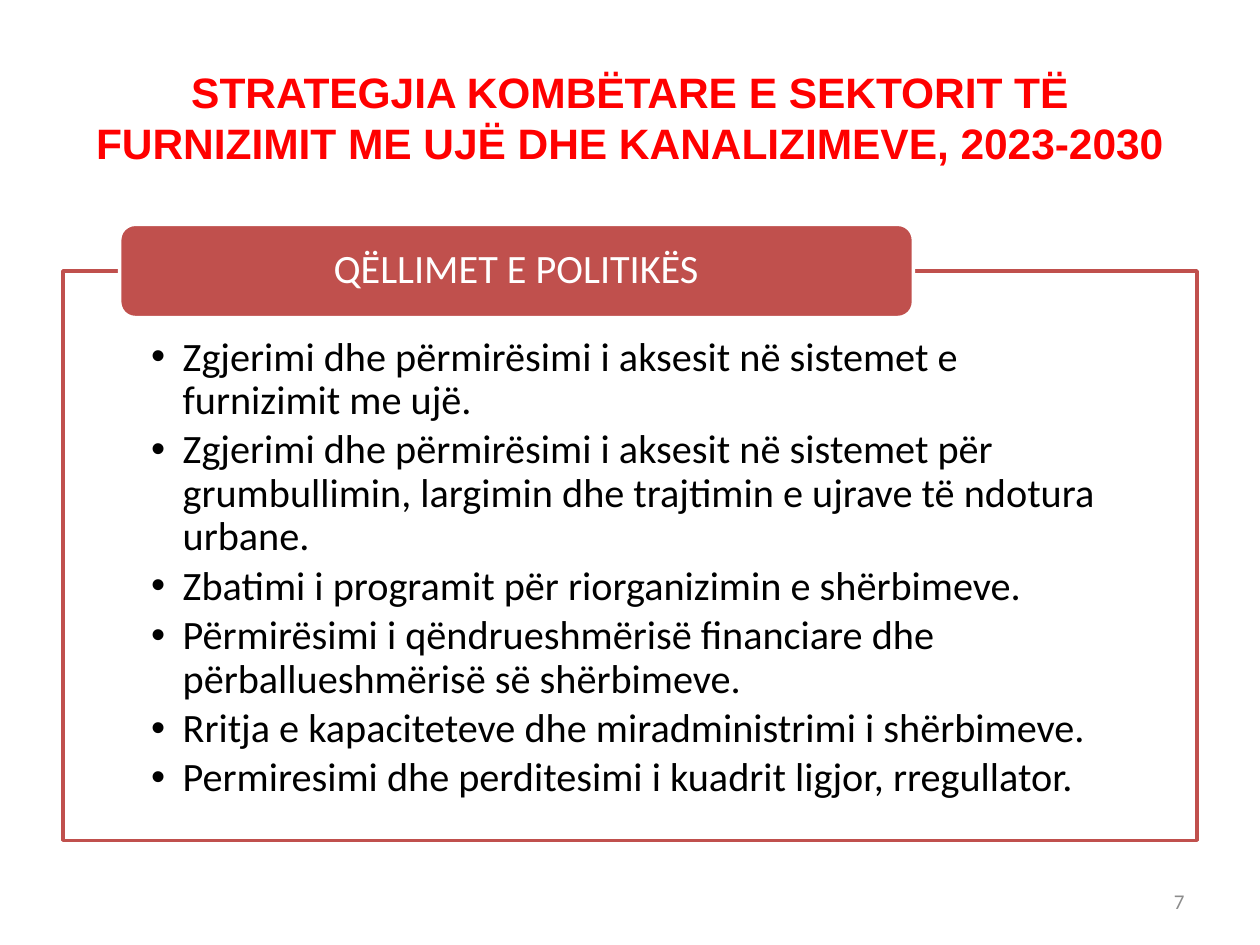
from pptx import Presentation
from pptx.dml.color import RGBColor
from pptx.enum.shapes import MSO_SHAPE
from pptx.enum.text import MSO_ANCHOR, MSO_AUTO_SIZE, PP_ALIGN
from pptx.util import Pt

RED = RGBColor(0xFF, 0x00, 0x00)
BRICK = RGBColor(0xC0, 0x50, 0x4D)
WHITE = RGBColor(0xFF, 0xFF, 0xFF)
BLACK = RGBColor(0x00, 0x00, 0x00)
GREY = RGBColor(0x8C, 0x8C, 0x8C)

TITLE = "STRATEGJIA KOMBËTARE E SEKTORIT TË FURNIZIMIT ME UJË DHE KANALIZIMEVE, 2023-2030"
HEADING = "QËLLIMET E POLITIKËS"
GOALS = [
    "Zgjerimi dhe përmirësimi i aksesit në sistemet e furnizimit me ujë.",
    "Zgjerimi dhe përmirësimi i aksesit në sistemet për grumbullimin, largimin dhe trajtimin e ujrave të ndotura urbane.",
    "Zbatimi i programit për riorganizimin e shërbimeve.",
    "Përmirësimi i qëndrueshmërisë financiare dhe përballueshmërisë së shërbimeve.",
    "Rritja e kapaciteteve dhe miradministrimi i shërbimeve.",
    "Permiresimi dhe perditesimi i kuadrit ligjor, rregullator.",
]
PAGE = "7"

MARGIN, WIDTH = 36, 648
BULLET_INDENT = Pt(18)
TITLE_FONT = {"name": "Arial", "size": Pt(24.3), "bold": True}
TEXT_FONT = {"name": "Calibri", "size": Pt(23)}
PAGE_FONT = {"name": "Calibri", "size": Pt(12)}
LIST_FORMAT = {"line_spacing": 0.9, "space_before": Pt(0), "space_after": Pt(3.4)}


def apply(obj, values):
    for name, value in values.items():
        setattr(obj, name, value)


def place(sp, left, top, width, height):
    apply(sp, {"left": Pt(left), "top": Pt(top), "width": Pt(width), "height": Pt(height)})


def outline(sp, fill, line):
    sp.fill.solid()
    sp.fill.fore_color.rgb = fill
    sp.line.color.rgb = line
    sp.line.width = Pt(2)


def write(sp, lines, font, color, anchor, align, para=None, insets=(7.2, 3.6, 7.2, 3.6)):
    tf = sp.text_frame
    sides = ("margin_left", "margin_top", "margin_right", "margin_bottom")
    apply(tf, {"word_wrap": True, "auto_size": MSO_AUTO_SIZE.NONE, "vertical_anchor": anchor})
    apply(tf, {side: Pt(inset) for side, inset in zip(sides, insets)})
    for i, line in enumerate(lines):
        p = tf.paragraphs[0] if i == 0 else tf.add_paragraph()
        apply(p, {"alignment": align, **(para or {})})
        r = p.add_run()
        r.text = line
        apply(r.font, font)
        r.font.color.rgb = color


prs = Presentation()
prs.slide_width, prs.slide_height = Pt(720), Pt(540)
s = prs.slides.add_slide(prs.slide_layouts[1])

title = s.shapes.title
place(title, MARGIN, 21.6, WIDTH, 90)
write(title, [TITLE], TITLE_FONT, RED, MSO_ANCHOR.MIDDLE, PP_ALIGN.CENTER)

goals = s.placeholders[1]
place(goals, MARGIN, 154.8, WIDTH, 325.4)
outline(goals, WHITE, BRICK)
write(goals, GOALS, TEXT_FONT, BLACK, MSO_ANCHOR.TOP, PP_ALIGN.LEFT,
      LIST_FORMAT, (50.4, 37.4, 50.4, 13))
for p in goals.text_frame.paragraphs:
    pPr = p._p.get_or_add_pPr()
    pPr.set("marL", str(BULLET_INDENT))
    pPr.set("indent", str(-BULLET_INDENT))

heading = s.shapes.add_shape(MSO_SHAPE.ROUNDED_RECTANGLE, Pt(68.4), Pt(128.2), Pt(453.6), Pt(53.3))
heading.shadow.inherit = False
outline(heading, BRICK, WHITE)
write(heading, [HEADING], TEXT_FONT, WHITE, MSO_ANCHOR.MIDDLE, PP_ALIGN.CENTER,
      {"line_spacing": 0.9}, (17.3, 0, 17.3, 0))

page = s.shapes.add_textbox(Pt(516), Pt(500.4), Pt(168), Pt(28.8))
write(page, [PAGE], PAGE_FONT, GREY, MSO_ANCHOR.MIDDLE, PP_ALIGN.RIGHT)

prs.save("out.pptx")
